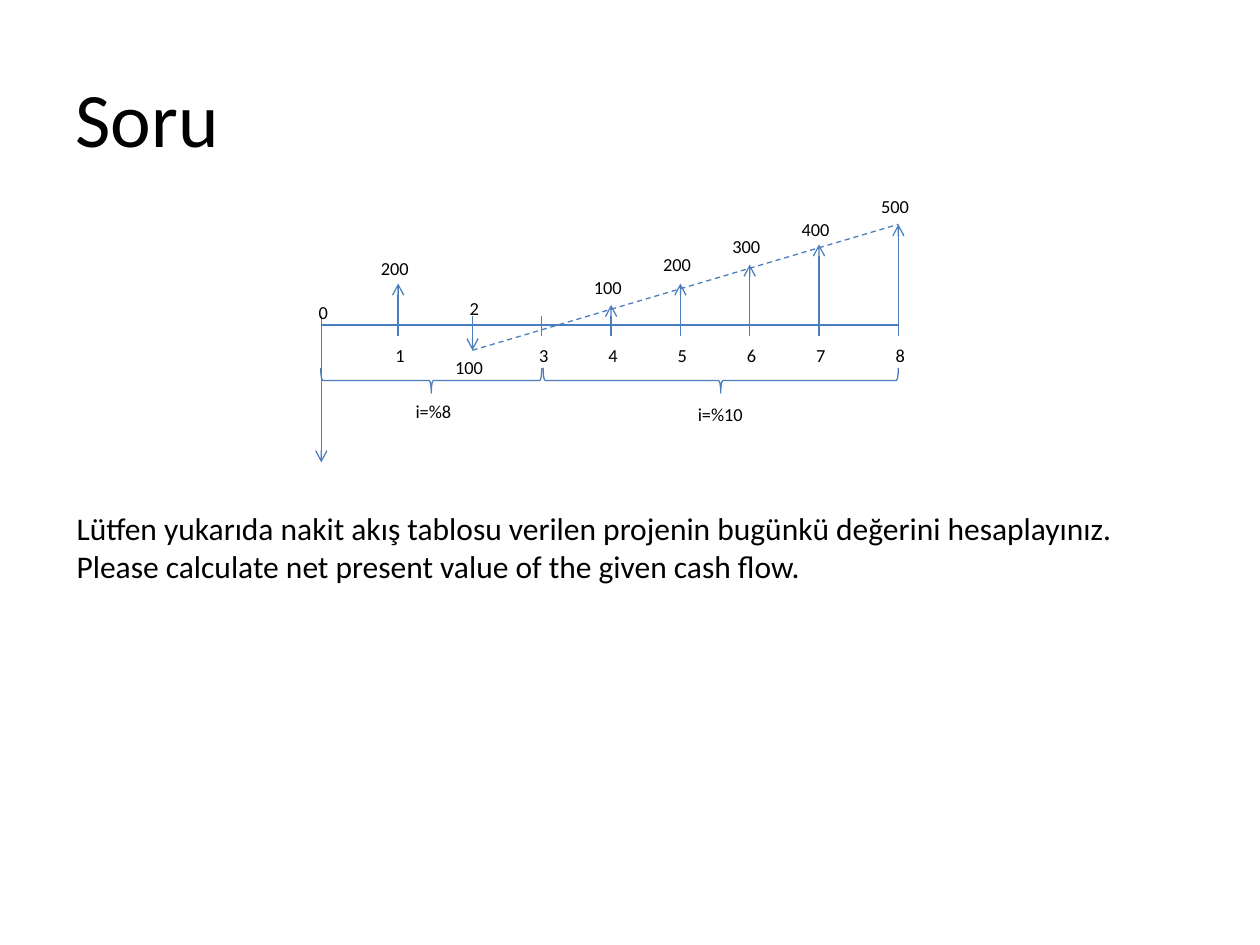
from lxml import etree
from pptx import Presentation
from pptx.dml.color import RGBColor
from pptx.enum.dml import MSO_LINE
from pptx.enum.shapes import MSO_CONNECTOR, MSO_SHAPE
from pptx.enum.text import MSO_ANCHOR, PP_ALIGN
from pptx.oxml.ns import qn
from pptx.util import Inches, Pt

STRAIGHT = MSO_CONNECTOR.STRAIGHT
BRACE = MSO_SHAPE.RIGHT_BRACE
DASH = MSO_LINE.DASH
LEFT = PP_ALIGN.LEFT
MIDDLE = MSO_ANCHOR.MIDDLE

COLORS = {"text": "000000", "line": "4B7EBC"}
FONT = "Calibri"
WIDTH, HEIGHT = Inches(10), Inches(7.5)
COLUMNS, ROWS = 100, 75
AXIS = 25.8
TICK_TOP, TICK_HEIGHT = 25.1, 1.6
LABEL_HEIGHT = 2.8

YEAR_COLUMNS = [25.5, 31.6, 37.5] + [43 + 5.5 * step for step in range(5)] + [71.3]
YEAR_LABEL_ROWS = {0: 23.4, 2: 23.1}
USUAL_LABEL_ROW = 26.8
ARROW_TIPS = {0: 36.7, 1: 22.5, 2: 27.8, 4: 24.2, 5: 22.5, 6: 21, 7: 19.4, 8: 17.8}
AMOUNTS = {
    1: ("200", 19.9), 2: ("100", 27.8), 4: ("100", 21.4), 5: ("200", 19.6),
    6: ("300", 18.2), 7: ("400", 16.8), 8: ("500", 15),
}
RATES = [
    ("i=%8", 32, 31.3, 25.45, 43),
    ("i=%10", 54.4, 31.5, 43.1, 71.3),
]
QUESTION = [
    "Lütfen yukarıda nakit akış tablosu verilen projenin bugünkü değerini hesaplayınız.",
    "Please calculate net present value of the given cash flow.",
]


def across(columns):
    return round(WIDTH * columns / COLUMNS)


def down(rows):
    return round(HEIGHT * rows / ROWS)


def add_span(para, text, size):
    span = para.add_run()
    span.text = text
    span.font.name = FONT
    span.font.size = Pt(size)
    span.font.color.rgb = RGBColor.from_string(COLORS["text"])


def add_text(shapes, lines, left, top, width, height, size=10.5, wrap=False):
    box = shapes.add_textbox(across(left), down(top), across(width), down(height))
    frame = box.text_frame
    frame.word_wrap = wrap
    for index, line in enumerate(lines):
        para = frame.add_paragraph() if index else frame.paragraphs[0]
        add_span(para, line, size)


def style_line(line):
    line.color.rgb = RGBColor.from_string(COLORS["line"])
    line.width = Pt(0.75)


def add_line(shapes, start, end, arrow=False, dashed=False):
    connector = shapes.add_connector(
        STRAIGHT, across(start[0]), down(start[1]), across(end[0]), down(end[1])
    )
    style_line(connector.line)
    if dashed:
        connector.line.dash_style = DASH
    if arrow:
        stroke = connector.line._get_or_add_ln()
        etree.SubElement(stroke, qn("a:tailEnd"), type="arrow")
    etree.SubElement(connector._element.spPr, qn("a:effectLst"))


def add_brace(shapes, start, end, middle=30.2, depth=2):
    span = end - start
    center = (start + end) / 2
    brace = shapes.add_shape(
        BRACE, across(center - depth / 2), down(middle - span / 2), across(depth), down(span)
    )
    brace.rotation = 90
    brace.shadow.inherit = False
    brace.fill.background()
    style_line(brace.line)


def add_title(page, text):
    title = page.shapes.title
    title.left, title.top = across(5), down(3)
    title.width, title.height = across(90), down(12.5)
    title.text_frame.vertical_anchor = MIDDLE
    para = title.text_frame.paragraphs[0]
    para.alignment = LEFT
    add_span(para, text, 44)


def add_cash_flow(page):
    shapes = page.shapes.add_group_shape().shapes
    for column in YEAR_COLUMNS:
        add_line(shapes, (column, TICK_TOP), (column, TICK_TOP + TICK_HEIGHT))
    add_line(shapes, (YEAR_COLUMNS[0], AXIS), (YEAR_COLUMNS[-1], AXIS))
    for year, tip in ARROW_TIPS.items():
        column = YEAR_COLUMNS[year]
        add_line(shapes, (column, AXIS), (column, tip), arrow=True)
    add_line(
        shapes, (YEAR_COLUMNS[2], ARROW_TIPS[2]), (YEAR_COLUMNS[8], ARROW_TIPS[8]), dashed=True
    )
    for year, column in enumerate(YEAR_COLUMNS):
        row = YEAR_LABEL_ROWS.get(year, USUAL_LABEL_ROW)
        add_text(shapes, [str(year)], column - 1.2, row, 2.4, LABEL_HEIGHT)
    for year, (amount, row) in AMOUNTS.items():
        add_text(shapes, [amount], YEAR_COLUMNS[year] - 2.35, row, 4.7, LABEL_HEIGHT)


def add_rates(page):
    for rate, left, top, start, end in RATES:
        add_brace(page.shapes, start, end)
        add_text(page.shapes, [rate], left, top, 6.7, LABEL_HEIGHT)


def main():
    deck = Presentation()
    deck.slide_width, deck.slide_height = WIDTH, HEIGHT
    page = deck.slides.add_slide(deck.slide_layouts[5])
    add_title(page, "Soru")
    add_cash_flow(page)
    add_text(page.shapes, QUESTION, 5.1, 39.9, 85, 7.1, size=18, wrap=True)
    add_rates(page)
    deck.save("out.pptx")


if __name__ == "__main__":
    main()
